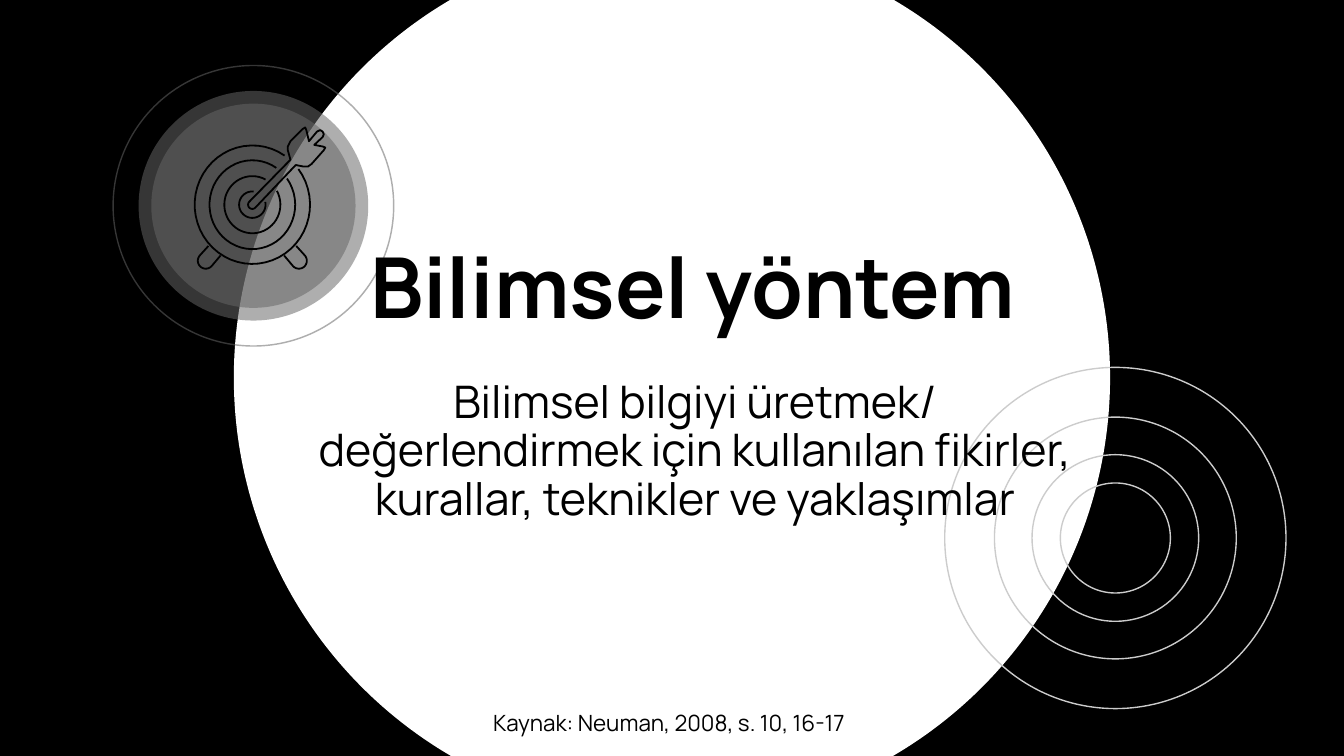
from math import cos, radians, sin

from lxml.etree import SubElement
from pptx import Presentation
from pptx.dml.color import RGBColor
from pptx.enum.shapes import MSO_SHAPE as Shape
from pptx.enum.text import MSO_ANCHOR as Anchor, PP_ALIGN as Align
from pptx.oxml.ns import qn
from pptx.util import Cm, Pt

FONT = "Manrope"
BLACK, WHITE, GRAY, SILVER = "000000", "FFFFFF", "666666", "CCCCCC"
TARGET_X, TARGET_Y = 4.77, 3.87


def paint(colour_format, colour):
    """Set a fill or line fill to a solid hex colour."""
    colour_format.solid()
    colour_format.fore_color.rgb = RGBColor.from_string(colour)


def add_circle(slide, centre, diameter, fill=None, line=None, alpha=None, kind=Shape.OVAL):
    """Add a round shape around a centre given in centimetres."""
    left, top = (Cm(middle - diameter / 2) for middle in centre)
    circle = slide.shapes.add_shape(kind, left, top, Cm(diameter), Cm(diameter))
    circle.shadow.inherit = False
    if fill:
        paint(circle.fill, fill)
    else:
        circle.fill.background()
    if line:
        paint(circle.line.fill, line)
        circle.line.width = Pt(0.75)
    else:
        circle.line.fill.background()
    if alpha:
        solid = circle.fill._xPr.find(qn("a:solidFill"))
        SubElement(solid[0], qn("a:alpha"), val=str(alpha * 1000))
    return circle


def arc(centre, radii, start, end, steps=48):
    """Return points along an elliptical arc, angles in degrees."""
    angles = [radians(start + (end - start) * step / steps) for step in range(steps + 1)]
    return [(centre[0] + radii[0] * cos(a), centre[1] + radii[1] * sin(a)) for a in angles]


def add_stroke(slide, points, close=False):
    """Draw an unfilled black outline through points in centimetres."""
    start, *rest = [(Cm(x), Cm(y)) for x, y in points]
    builder = slide.shapes.build_freeform(*start)
    builder.add_line_segments(rest, close=close)
    stroke = builder.convert_to_shape()
    stroke.shadow.inherit = False
    stroke.fill.background()
    paint(stroke.line.fill, BLACK)
    stroke.line.width = Pt(0.96)


def add_text(slide, box, text, size, bold=False, align=Align.CENTER,
             anchor=Anchor.TOP, spacing=None):
    """Add a one-paragraph text box, its box given in centimetres."""
    frame = slide.shapes.add_textbox(*map(Cm, box)).text_frame
    frame.word_wrap = True
    frame.vertical_anchor = anchor
    if spacing:
        frame.margin_left = frame.margin_right = Cm(0.25)
        frame.margin_top = frame.margin_bottom = Cm(0.25)
    paragraph = frame.paragraphs[0]
    paragraph.alignment = align
    paragraph.line_spacing = spacing
    run = paragraph.add_run()
    run.text = text
    run.font.name = FONT
    run.font.size = Pt(size)
    run.font.bold = bold
    run.font.color.rgb = RGBColor.from_string(BLACK)


def add_badge(slide):
    """Add the translucent discs and thin ring behind the target."""
    centre = (4.79, 3.89)
    for diameter in (4.34, 3.86):
        add_circle(slide, centre, diameter, fill=GRAY, alpha=53)
    ring = add_circle(slide, centre, 5.33, fill=GRAY, alpha=53, kind=Shape.DONUT)
    ring.adjustments[0] = 0.005


def add_target(slide):
    """Draw the target rings, both feet and the dart."""
    centre = (TARGET_X, TARGET_Y)
    rings = [(1.09, 1.12, -37, 304), (0.81, 0.84, -36, 304),
             (0.53, 0.54, -29, 298), (0.25, 0.25, -12, 276)]
    for width, height, start, end in rings:
        add_stroke(slide, arc(centre, (width, height), start, end))

    foot = [(3.94, 4.65), *arc((3.89, 4.93), (0.15, 0.15), 225, 45), (4.17, 4.83)]
    add_stroke(slide, foot)
    add_stroke(slide, [(2 * TARGET_X - x, y) for x, y in foot])

    feathers = [(6.1, 2.77), (5.94, 2.74), (6.1, 2.59), (6.12, 2.54), (6.1, 2.49),
                (6.05, 2.46), (5.99, 2.49), (5.84, 2.67), (5.79, 2.46), (5.77, 2.41),
                (5.72, 2.44), (5.49, 2.67), (5.44, 2.77), (5.44, 2.84), (5.49, 3.02)]
    tip = arc(centre, (0.08, 0.08), 225, 45)
    lower_edge = [(5.59, 3.12), (5.74, 3.15), (5.82, 3.15), (5.89, 3.1),
                  (6.12, 2.84), (6.15, 2.79)]
    add_stroke(slide, feathers + tip + lower_edge, close=True)


def main():
    """Build the slide and save it."""
    deck = Presentation()
    deck.slide_width, deck.slide_height = Cm(25.4), Cm(14.29)
    slide = deck.slides.add_slide(deck.slide_layouts[6])
    paint(slide.background.fill, BLACK)

    add_circle(slide, (12.7, 7.14), 16.56, fill=WHITE)
    for diameter in (6.45, 3.15, 4.57, 2.08):
        add_circle(slide, (21.08, 10.17), diameter, line=SILVER)
    add_badge(slide)

    add_text(slide, (6.5, 1.63, 13.18, 4.98), "Bilimsel yöntem", 45, bold=True,
             anchor=Anchor.BOTTOM, spacing=0.9)
    add_text(slide, (5.31, 6.93, 15.65, 4.52),
             "Bilimsel bilgiyi üretmek/ değerlendirmek için kullanılan fikirler, "
             "kurallar, teknikler ve yaklaşımlar", 24, spacing=0.9)
    add_target(slide)
    add_text(slide, (9.07, 13.28, 8.46, 0.76), "Kaynak: Neuman, 2008, s. 10, 16-17",
             12, align=Align.LEFT)

    deck.save("out.pptx")


if __name__ == "__main__":
    main()
